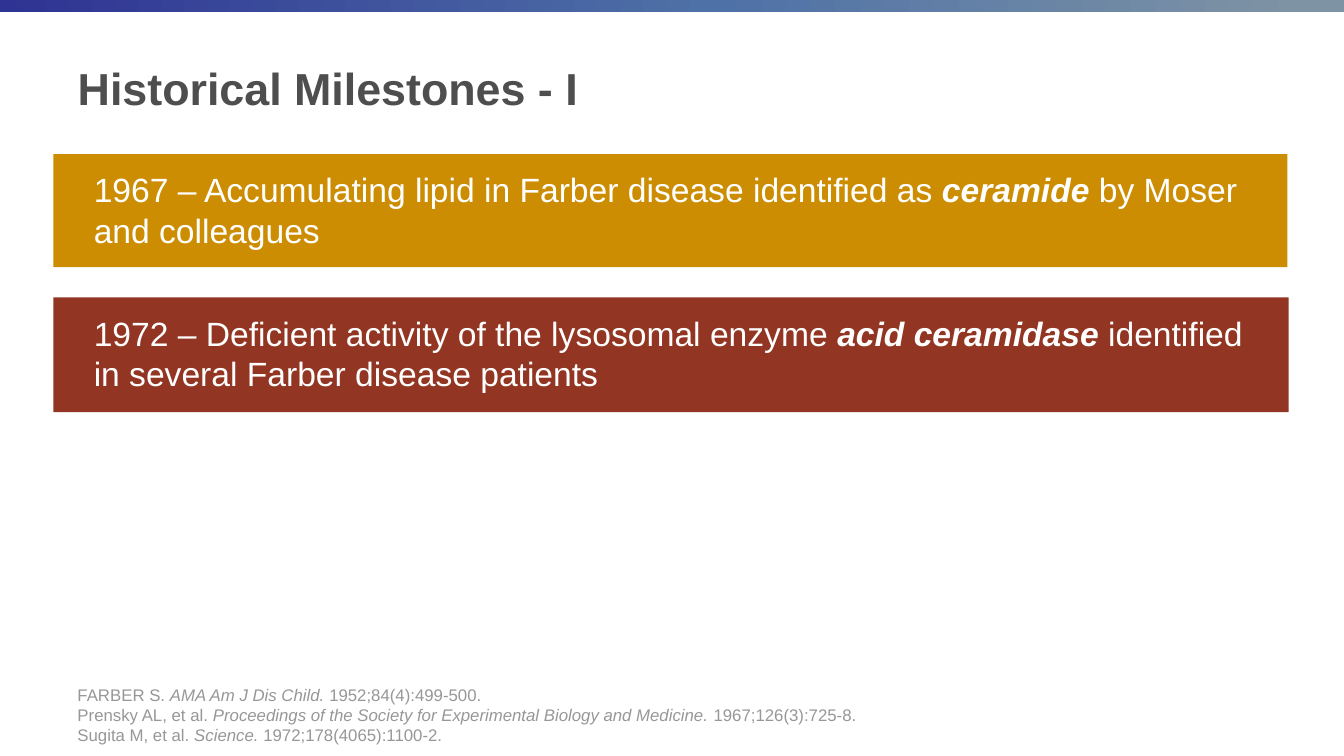
"""Build the slide on historical milestones in Farber disease."""
from copy import deepcopy

from pptx import Presentation
from pptx.dml.color import RGBColor
from pptx.enum.shapes import MSO_SHAPE
from pptx.enum.text import MSO_ANCHOR, MSO_AUTO_SIZE, PP_ALIGN
from pptx.oxml.ns import qn
from pptx.util import Inches, Pt

TITLE = "Historical Milestones - I"
MILESTONES = [
    {
        "runs": ("1967 – Accumulating lipid in Farber disease identified as ",
                 "ceramide", " by Moser and colleagues"),
        "color": "CC8D02",
        "band": (0.53, 1.53, 12.24, 1.12),
        "text": (0.83, 1.63, 11.75, 1.03),
    },
    {
        "runs": ("1972 – Deficient activity of the lysosomal enzyme ",
                 "acid ceramidase ",
                 "identified in several Farber disease patients"),
        "color": "923522",
        "band": (0.53, 2.95, 12.25, 1.14),
        "text": (0.83, 3.05, 11.75, 2.71),
    },
]
REFERENCES = [
    ("FARBER S. ", "AMA Am J Dis Child. ", "1952;84(4):499-500."),
    ("Prensky AL, et al. ",
     "Proceedings of the Society for Experimental Biology and Medicine. ",
     "1967;126(3):725-8."),
    ("Sugita M, et al. ", "Science. ", "1972;178(4065):1100-2."),
]
TOP_GRADIENT = [(0, "2F3393"), (0.53, "4E71A7"), (0.97, "7E93A4")]
TITLE_BOX = (0.67, 0.22, 11.75, 1.3)
REFERENCE_BOX = (0.67, 6.36, 11.75, 1.08)
TOP_BAR = (0, 0, 13.33, 0.12)


def rgb(code):
    return RGBColor.from_string(code)


def place(shape, box):
    shape.left, shape.top, shape.width, shape.height = map(Inches, box)


def prepare(frame, anchor):
    frame.word_wrap = True
    frame.auto_size = MSO_AUTO_SIZE.NONE
    frame.vertical_anchor = anchor


def add_run(paragraph, text, size, color, bold=False, italic=False):
    run = paragraph.add_run()
    run.text = text
    run.font.name = "Arial"
    run.font.size = Pt(size)
    run.font.bold = bold
    run.font.italic = italic
    run.font.color.rgb = rgb(color)


def add_bar(slide, box):
    bar = slide.shapes.add_shape(MSO_SHAPE.RECTANGLE, *map(Inches, box))
    bar.shadow.inherit = False
    bar.line.fill.background()
    return bar


def send_to_back(shape):
    shape._element.getparent().insert(2, shape._element)


def add_top_bar(slide):
    bar = add_bar(slide, TOP_BAR)
    bar.fill.gradient()
    bar.fill.gradient_angle = 0
    stop_list = bar._element.find(".//" + qn("a:gsLst"))
    stop_list.append(deepcopy(stop_list[-1]))
    for stop, (position, color) in zip(bar.fill.gradient_stops, TOP_GRADIENT):
        stop.position = position
        stop.color.rgb = rgb(color)
    send_to_back(bar)


def add_title(slide):
    title = slide.shapes.title
    place(title, TITLE_BOX)
    prepare(title.text_frame, MSO_ANCHOR.MIDDLE)
    heading = title.text_frame.paragraphs[0]
    heading.alignment = PP_ALIGN.LEFT
    add_run(heading, TITLE, 32, "4D4E4D", bold=True)


def add_milestone(slide, body, milestone):
    band = add_bar(slide, milestone["band"])
    band.fill.solid()
    band.fill.fore_color.rgb = rgb(milestone["color"])
    send_to_back(band)

    place(body, milestone["text"])
    prepare(body.text_frame, MSO_ANCHOR.TOP)
    statement = body.text_frame.paragraphs[0]
    statement.space_before = Pt(6)
    properties = statement._p.get_or_add_pPr()
    properties.set("marL", "0")
    properties.set("indent", "0")
    properties.append(properties.makeelement(qn("a:buNone"), {}))
    for index, text in enumerate(milestone["runs"]):
        key_term = index == 1
        add_run(statement, text, 24, "FFFFFF", bold=key_term, italic=key_term)


def add_references(slide):
    frame = slide.shapes.add_textbox(*map(Inches, REFERENCE_BOX)).text_frame
    prepare(frame, MSO_ANCHOR.BOTTOM)
    for number, reference in enumerate(REFERENCES):
        citation = frame.add_paragraph() if number else frame.paragraphs[0]
        for index, text in enumerate(reference):
            add_run(citation, text, 12, "979797", italic=index == 1)


def main():
    deck = Presentation()
    deck.slide_width, deck.slide_height = Inches(13.33), Inches(7.5)
    slide = deck.slides.add_slide(deck.slide_layouts.get_by_name("Two Content"))
    add_title(slide)
    bodies = list(slide.placeholders)[1:]
    for body, milestone in zip(bodies, MILESTONES):
        add_milestone(slide, body, milestone)
    add_references(slide)
    add_top_bar(slide)
    deck.save("out.pptx")


if __name__ == "__main__":
    main()
